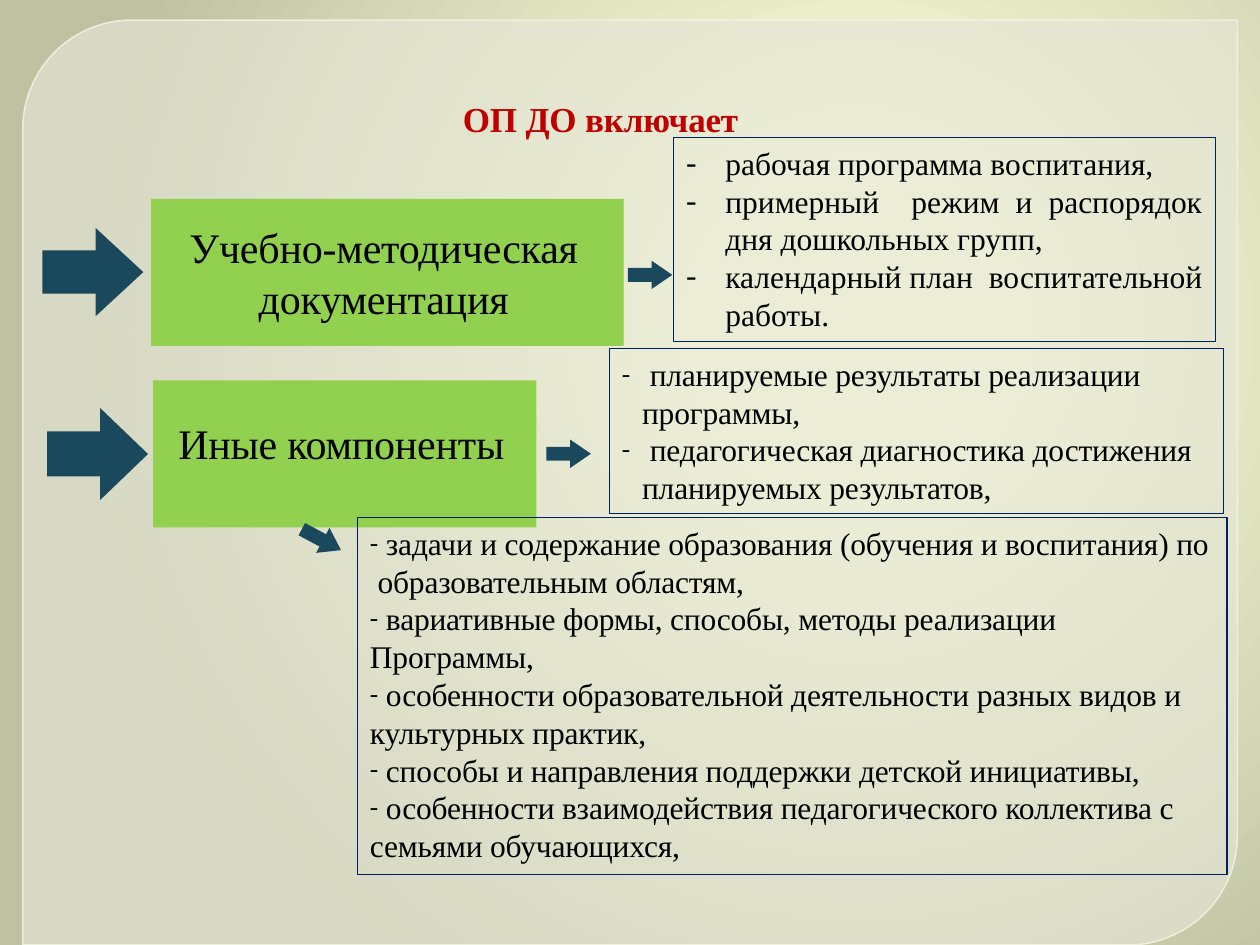
from lxml.etree import SubElement
from pptx import Presentation
from pptx.dml.color import RGBColor
from pptx.enum.shapes import MSO_SHAPE
from pptx.enum.text import MSO_ANCHOR, MSO_AUTO_SIZE, PP_ALIGN
from pptx.oxml import parse_xml
from pptx.oxml.ns import nsdecls, qn
from pptx.util import Pt

FONT = "Times New Roman"
GREEN, TEAL, NAVY, BLACK, RED = "92D050", "1A495D", "002060", "000000", "C00000"
BACKGROUND = [(0, "FBFED9"), (20, "F9FCD8"), (100, "BFC2A1")]
PANEL = (13, 11.5, 694, 528.5)
TITLE = ("ОП ДО включает", (124.6, 54, 437, 25.2))
BLOCKS = [
    ("Учебно-методическая документация", (86.4, 113.6, 270, 84), (13.7, 13, 18, 0)),
    ("Иные компоненты", (87.6, 217.4, 219, 84), (9.6, 21, 13.7, 0)),
]
ARROWS = [
    ((24.2, 130.3, 57.7, 50.4), 0.54, 0),
    ((26.9, 233.2, 57.7, 52.5), 0.52, 0),
    ((358.8, 149, 25.4, 16.2), 0.73, 0),
    ((312.3, 251.2, 25.4, 16.2), 0.73, 0),
    ((171, 300.3, 25.4, 16.2), 0.73, 28.1),
]
LISTS = [
    {"at": (384.8, 78.6, 309.6, 116.6), "align": PP_ALIGN.JUSTIFY, "hang": 22.5,
     "bullet": 100, "spacing": 0, "items": [
         "рабочая программа воспитания, ",
         "примерный  режим и распорядок дня дошкольных групп, ",
         "календарный план  воспитательной работы. "]},
    {"at": (348.2, 199.1, 351, 94.3), "align": PP_ALIGN.LEFT, "hang": 11.5,
     "bullet": 80, "spacing": -10, "items": [
         " планируемые результаты реализации программы,",
         " педагогическая диагностика достижения планируемых результатов,"]},
    {"at": (204.2, 295.7, 497, 204), "align": PP_ALIGN.LEFT, "hang": 0,
     "bullet": 80, "spacing": -10, "items": [
         " задачи и содержание образования (обучения и воспитания) по  образовательным областям,",
         " вариативные формы, способы, методы реализации Программы,",
         " особенности образовательной деятельности разных видов и  культурных практик,",
         " способы и направления поддержки детской инициативы,",
         " особенности взаимодействия педагогического коллектива с  семьями обучающихся,"]},
]


def color(value):
    return RGBColor.from_string(value)


def place(shape, at):
    shape.left, shape.top, shape.width, shape.height = map(Pt, at)


def add_filled(page, kind, at, fill):
    shape = page.shapes.add_shape(kind, *map(Pt, at))
    shape.shadow.inherit = False
    shape.fill.solid()
    shape.fill.fore_color.rgb = color(fill)
    shape.line.fill.background()
    return shape


def write(shape, lines, size, ink, align, margins, bold=False, spacing=-10):
    frame = shape.text_frame
    frame.text = "\n".join(lines)
    frame.word_wrap = True
    frame.auto_size = MSO_AUTO_SIZE.NONE
    frame.vertical_anchor = MSO_ANCHOR.TOP
    frame.margin_left, frame.margin_top, frame.margin_right, frame.margin_bottom = map(Pt, margins)
    for para in frame.paragraphs:
        para.alignment = align
        para.space_before = para.space_after = Pt(0)
        for span in para.runs:
            span.font.name, span.font.size, span.font.bold = FONT, Pt(size), bold
            span.font.color.rgb = color(ink)
            span.font._element.set("spc", str(spacing))


def add_bullets(shape, hang, percent):
    for para in shape.text_frame.paragraphs:
        properties = para._p.get_or_add_pPr()
        properties.set("marL", str(Pt(hang)))
        properties.set("indent", str(-Pt(hang)))
        SubElement(properties, qn("a:buSzPct")).set("val", str(percent * 1000))
        SubElement(properties, qn("a:buFont")).set("typeface", FONT)
        SubElement(properties, qn("a:buChar")).set("char", "-")


def paint_background(page):
    fill = page.background.fill
    fill.gradient()
    gradient = page.background._cSld.find(".//" + qn("a:gradFill"))
    stops = "".join(f'<a:gs pos="{position * 1000}"><a:srgbClr val="{value}"/></a:gs>'
                    for position, value in BACKGROUND)
    gradient.getparent().replace(gradient, parse_xml(
        f'<a:gradFill {nsdecls("a")} rotWithShape="1"><a:gsLst>{stops}</a:gsLst><a:path path="circle">'
        '<a:fillToRect l="68000" t="35000" r="32000" b="65000"/></a:path></a:gradFill>'))


def add_panel(page):
    panel = add_filled(page, MSO_SHAPE.ROUND_2_DIAG_RECTANGLE, PANEL, "E5E6D7")
    panel.adjustments[0], panel.adjustments[1] = 0.118, 0
    panel.line.color.rgb = color("F2F4E2")
    panel.line.width = Pt(0.87)
    for tint, percent in zip(panel._element.spPr.iter(qn("a:srgbClr")), (65, 88)):
        SubElement(tint, qn("a:alpha")).set("val", str(percent * 1000))


def main():
    """Build the slide on what the preschool programme includes."""
    deck = Presentation()
    deck.slide_width, deck.slide_height = Pt(720), Pt(540)
    page = deck.slides.add_slide(deck.slide_layouts.get_by_name("Comparison"))
    heading, *bodies = list(page.placeholders)[:5]
    paint_background(page)
    add_panel(page)

    text, at = TITLE
    place(heading, at)
    write(heading, [text], 20, RED, PP_ALIGN.CENTER, (0, 1.5, 0, 0), bold=True)
    page.shapes._spTree.append(heading._element)

    for text, at, margins in BLOCKS:
        block = add_filled(page, MSO_SHAPE.RECTANGLE, at, GREEN)
        write(block, [text], 24, BLACK, PP_ALIGN.CENTER, margins)

    for at, head, angle in ARROWS:
        arrow = add_filled(page, MSO_SHAPE.RIGHT_ARROW, at, TEAL)
        arrow.adjustments[0], arrow.adjustments[1] = 0.49, head
        arrow.rotation = angle

    for box, group in zip(bodies, LISTS):
        place(box, group["at"])
        box.line.color.rgb = color(NAVY)
        box.line.width = Pt(0.75)
        write(box, group["items"], 18, BLACK, group["align"], (7.2, 3.6, 7.2, 3.6),
              spacing=group["spacing"])
        add_bullets(box, group["hang"], group["bullet"])
        page.shapes._spTree.append(box._element)
    for spare in bodies[len(LISTS):]:
        spare._element.getparent().remove(spare._element)

    deck.save("out.pptx")


if __name__ == "__main__":
    main()
